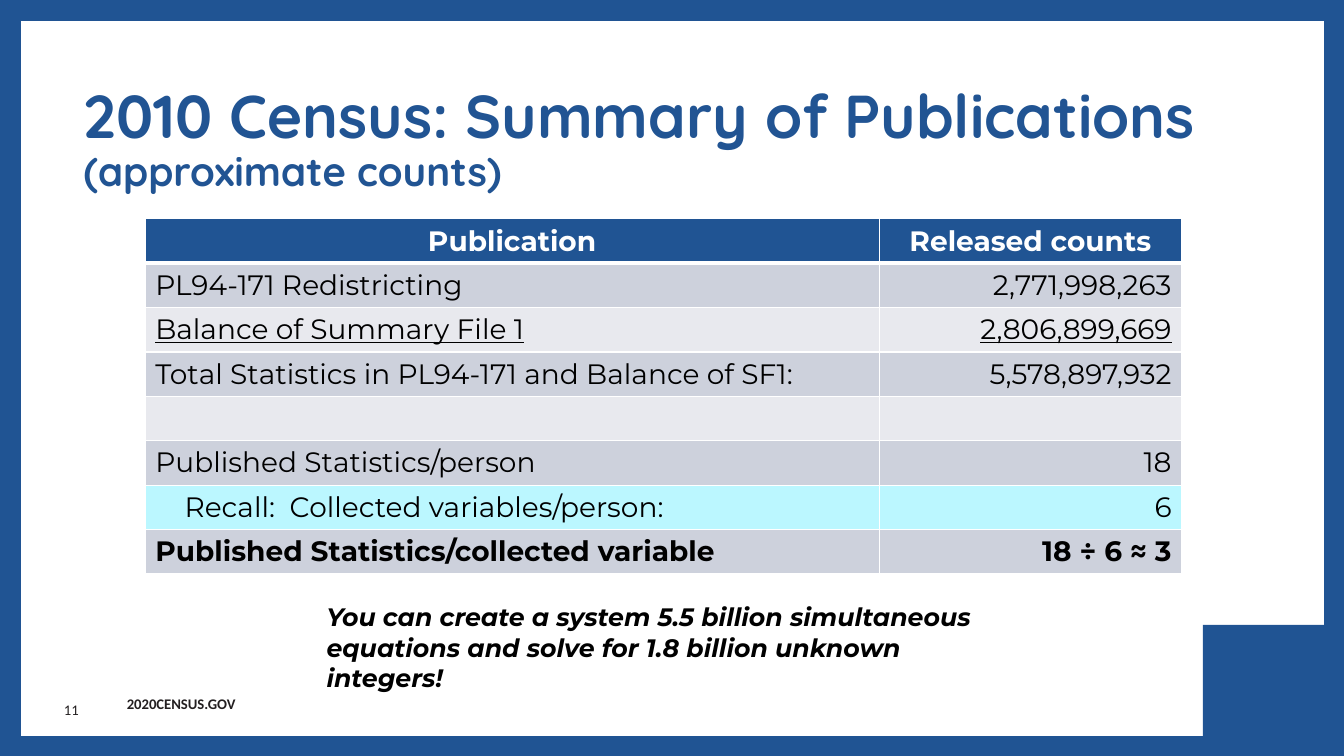
"""Build the slide that summarises the 2010 Census publications in a table."""
from lxml import etree
from pptx import Presentation
from pptx.dml.color import RGBColor
from pptx.enum.shapes import MSO_SHAPE as Shape
from pptx.enum.text import MSO_ANCHOR as Anchor, MSO_AUTO_SIZE as AutoSize, PP_ALIGN as Align
from pptx.oxml.ns import qn
from pptx.util import Pt

PX = 9144
BLUE = RGBColor(0x20, 0x54, 0x93)
TITLE_BLUE = RGBColor(0x21, 0x54, 0x93)
WHITE = RGBColor(0xFF, 0xFF, 0xFF)
BLACK = RGBColor(0x00, 0x00, 0x00)
INK = RGBColor(0x23, 0x1F, 0x20)
DARK_BAND = RGBColor(0xCD, 0xD1, 0xDC)
LIGHT_BAND = RGBColor(0xE8, 0xE9, 0xEE)
HIGHLIGHT = RGBColor(0xBB, 0xF7, 0xFF)


def add_span(para, text, font, size, color, bold=False):
    span = para.add_run()
    span.text = text
    span.font.name = font
    span.font.size = Pt(size)
    span.font.color.rgb = color
    span.font.bold = bold
    return span


def add_border(cell, side, points):
    line = etree.SubElement(cell._tc.get_or_add_tcPr(), qn(f"a:ln{side}"), w=str(Pt(points)))
    fill = etree.SubElement(line, qn("a:solidFill"))
    etree.SubElement(fill, qn("a:srgbClr"), val=str(WHITE))


deck = Presentation()
deck.slide_width = 1333 * PX
deck.slide_height = 750 * PX
page = deck.slides.add_slide(deck.slide_layouts[5])
page.background.fill.solid()
page.background.fill.fore_color.rgb = BLUE

for left, top, width, height, color in [
    (21, 21, 1292, 709, WHITE),
    (1193, 620, 140, 130, BLUE),
]:
    panel = page.shapes.add_shape(Shape.RECTANGLE, left * PX, top * PX, width * PX, height * PX)
    panel.shadow.inherit = False
    panel.fill.solid()
    panel.fill.fore_color.rgb = color
    panel.line.fill.background()

title = page.shapes.title
page.shapes.element.append(title.element)
title.left, title.top, title.width, title.height = 73 * PX, 81 * PX, 1171 * PX, 145 * PX
title.text_frame.auto_size = AutoSize.NONE
title.text_frame.vertical_anchor = Anchor.TOP
para = title.text_frame.paragraphs[0]
para.alignment = Align.LEFT
para.line_spacing = 0.9
add_span(para, "2010 Census: Summary of Publications", "Quicksand", 43.2, TITLE_BLUE, True)
para.add_line_break()
add_span(para, "(approximate counts)", "Quicksand", 28.8, TITLE_BLUE, True)

rows = [
    ("Publication", "Released counts"),
    ("PL94-171 Redistricting", "2,771,998,263"),
    ("Balance of Summary File 1", "2,806,899,669"),
    ("Total Statistics in PL94-171 and Balance of SF1:", "5,578,897,932"),
    ("", ""),
    ("Published Statistics/person", "18"),
    ("Recall:  Collected variables/person:", "6"),
    ("Published Statistics/collected variable", "18 ÷ 6 ≈ 3"),
]
HEADER, UNDERLINED, RECALL, RESULT = 0, 2, 6, 7
ROW_HEIGHT = 44
table = page.shapes.add_table(
    len(rows), 2, 144 * PX, 217 * PX, 1028 * PX, len(rows) * ROW_HEIGHT * PX
).table
table.columns[0].width = 728 * PX
table.columns[1].width = 300 * PX

for row, texts in enumerate(rows):
    table.rows[row].height = ROW_HEIGHT * PX
    band = {HEADER: BLUE, RECALL: HIGHLIGHT}.get(row, DARK_BAND if row % 2 else LIGHT_BAND)
    for column, text in enumerate(texts):
        cell = table.cell(row, column)
        for side in "LRTB":
            under_header = (row, side) in [(HEADER, "B"), (HEADER + 1, "T")]
            add_border(cell, side, 3 if under_header else 1)
        cell.fill.solid()
        cell.fill.fore_color.rgb = band
        para = cell.text_frame.paragraphs[0]
        para.alignment = Align.CENTER if row == HEADER else (Align.LEFT, Align.RIGHT)[column]
        if text:
            color = WHITE if row == HEADER else BLACK
            span = add_span(para, text, "Montserrat", 20, color, row in (HEADER, RESULT))
            span.font.underline = row == UNDERLINED
table.cell(RECALL, 0).margin_left = 39 * PX

CLAIM = (
    "You can create a system 5.5 billion simultaneous equations "
    "and solve for 1.8 billion unknown integers!"
)
for text, place, font, size, color, bold, italic, align, anchor, wrap in [
    ("2020CENSUS.GOV", (116, 684, 131, 28), "Calibri", 10.5, INK, True, False,
     Align.LEFT, Anchor.TOP, False),
    ("11", (21, 684, 67, 40), "Calibri", 10.5, INK, False, False,
     Align.RIGHT, Anchor.MIDDLE, True),
    (CLAIM, (314, 592, 688, 100), "Montserrat", 18, BLACK, True, True,
     Align.LEFT, Anchor.TOP, True),
]:
    box = page.shapes.add_textbox(*(length * PX for length in place))
    box.text_frame.word_wrap = wrap
    box.text_frame.vertical_anchor = anchor
    para = box.text_frame.paragraphs[0]
    para.alignment = align
    add_span(para, text, font, size, color, bold).font.italic = italic

deck.save("out.pptx")
